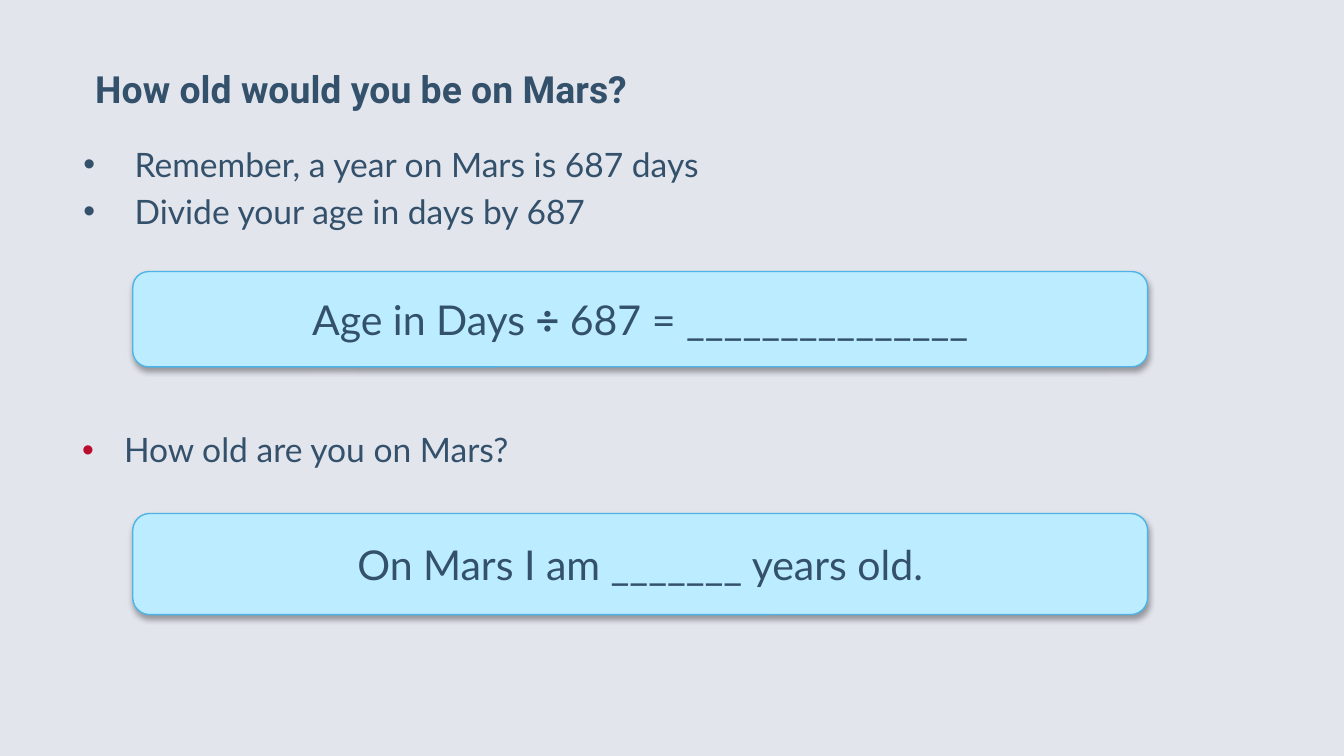
from dataclasses import dataclass

from lxml.etree import SubElement
from pptx import Presentation
from pptx.dml.color import RGBColor as RGB
from pptx.enum.shapes import MSO_SHAPE as SHAPE
from pptx.enum.text import MSO_ANCHOR as ANCHOR, MSO_AUTO_SIZE as AUTO, PP_ALIGN as ALIGN
from pptx.oxml.ns import qn
from pptx.util import Cm, Pt


@dataclass(frozen=True)
class Theme:
    background: str = "E3E5ED"
    text: str = "34516C"
    accent: str = "BA0C2F"
    box_fill: str = "BCECFF"
    box_line: str = "4EB4E7"
    shadow: str = "000000"
    heading_font: str = "Roboto"
    body_font: str = "Lato"
    title_size: int = 20
    list_size: int = 18
    box_size: int = 22


theme = Theme()


def style(font, name, size, bold=False):
    font.name = name
    font.size = Pt(size)
    font.bold = bold
    font.color.rgb = RGB.from_string(theme.text)


def add_bullet(p, color, indent):
    pPr = p._p.get_or_add_pPr()
    pPr.set("marL", str(indent))
    pPr.set("indent", str(-indent))
    SubElement(SubElement(pPr, qn("a:buClr")), qn("a:srgbClr"), val=color)
    SubElement(pPr, qn("a:buFont"), typeface="Arial")
    SubElement(pPr, qn("a:buChar"), char="•")


prs = Presentation()
prs.slide_width, prs.slide_height = Cm(25.4), Cm(14.28)
s = prs.slides.add_slide(prs.slide_layouts[3])
s.background.fill.solid()
s.background.fill.fore_color.rgb = RGB.from_string(theme.background)

title, steps, question = s.placeholders
title.left, title.top, title.width, title.height = Cm(1.8), Cm(0.33), Cm(17.73), Cm(1.78)
tf = title.text_frame
tf.text = "How old would you be on Mars?"
tf.auto_size = AUTO.NONE
tf.vertical_anchor = ANCHOR.BOTTOM
tf.margin_left = tf.margin_top = tf.margin_right = tf.margin_bottom = 0
p = tf.paragraphs[0]
p.alignment = ALIGN.LEFT
p.line_spacing = 0.9
style(p.runs[0].font, theme.heading_font, theme.title_size, True)

lists = [
    (steps, 1.32, 2.59, 3.25, 0.97, theme.text,
     ["Remember, a year on Mars is 687 days", "Divide your age in days by 687"]),
    (question, 1.3, 7.98, 2.18, 0.79, theme.accent, ["How old are you on Mars?"]),
]
for sp, left, top, height, indent, color, lines in lists:
    sp.left, sp.top, sp.width, sp.height = Cm(left), Cm(top), Cm(23.83), Cm(height)
    tf = sp.text_frame
    tf.text = "\n".join(lines)
    tf.auto_size = AUTO.NONE
    for i, p in enumerate(tf.paragraphs):
        add_bullet(p, color, Cm(indent))
        p.space_before = Pt(3.6 if i else 0)
        style(p.runs[0].font, theme.body_font, theme.list_size)

boxes = [
    (5.13, 1.8, [("Age in Days ", False), ("÷", True), (" 687 = _______________", False)]),
    (9.7, 1.91, [("On Mars I am _______ years old.", False)]),
]
for top, height, parts in boxes:
    sp = s.shapes.add_shape(SHAPE.ROUNDED_RECTANGLE, Cm(2.51), Cm(top), Cm(19.18), Cm(height))
    sp.fill.solid()
    sp.fill.fore_color.rgb = RGB.from_string(theme.box_fill)
    sp.line.color.rgb = RGB.from_string(theme.box_line)
    sp.line.width = Pt(0.75)
    sp.shadow.inherit = False
    effects = sp._element.spPr.find(qn("a:effectLst"))
    shadow = SubElement(effects, qn("a:outerShdw"), blurRad=str(Pt(3.1)),
                        dist=str(Pt(1.8)), dir="5400000", rotWithShape="0")
    tint = SubElement(shadow, qn("a:srgbClr"), val=theme.shadow)
    SubElement(tint, qn("a:alpha"), val="35000")
    tf = sp.text_frame
    tf.word_wrap = True
    tf.vertical_anchor = ANCHOR.MIDDLE
    p = tf.paragraphs[0]
    p.alignment = ALIGN.CENTER
    for text, bold in parts:
        r = p.add_run()
        r.text = text
        style(r.font, theme.body_font, theme.box_size, bold)

prs.save("out.pptx")
